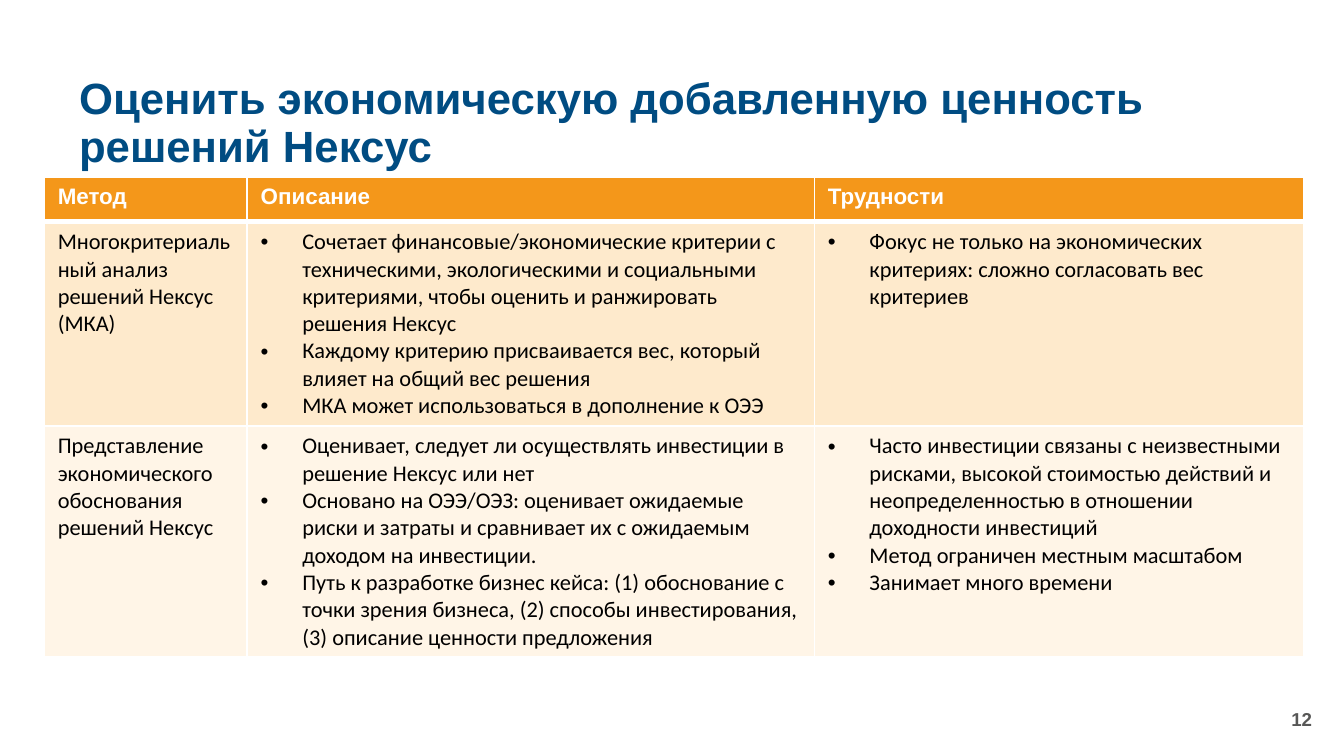
from lxml.etree import SubElement
from pptx import Presentation
from pptx.dml.color import RGBColor as RGB
from pptx.enum.text import MSO_ANCHOR as Anchor, PP_ALIGN as Align
from pptx.oxml import parse_xml
from pptx.oxml.ns import nsdecls, qn
from pptx.util import Inches, Pt

# Content
TITLE = "Оценить экономическую добавленную ценность решений Нексус"
PAGE_NUMBER = "12"
HEADERS = ["Метод", "Описание", "Трудности"]
# Each row: method, description bullets, difficulty bullets
METHODS = [
    ("Многокритериальный анализ решений Нексус (МКА)",
     ["Сочетает финансовые/экономические критерии с техническими, экологическими "
      "и социальными критериями, чтобы оценить и ранжировать решения Нексус",
      "Каждому критерию присваивается вес, который влияет на общий вес решения",
      "МКА может использоваться в дополнение к ОЭЭ"],
     ["Фокус не только на экономических критериях: сложно согласовать вес критериев"]),
    ("Представление экономического обоснования решений Нексус",
     ["Оценивает, следует ли осуществлять инвестиции в решение Нексус или нет",
      "Основано на ОЭЭ/ОЭЗ: оценивает ожидаемые риски и затраты и сравнивает их "
      "с ожидаемым доходом на инвестиции.",
      "Путь к разработке бизнес кейса: (1) обоснование с точки зрения бизнеса, "
      "(2) способы инвестирования, (3) описание ценности предложения"],
     ["Часто инвестиции связаны с неизвестными рисками, высокой стоимостью действий "
      "и неопределенностью в отношении доходности инвестиций",
      "Метод ограничен местным масштабом",
      "Занимает много времени"]),
]

# Theme and layout, in points and inches
THEME = {
    "title": {"name": "Arial", "size": 23.4, "bold": True, "color": "004C82"},
    "number": {"name": "Arial", "size": 10, "bold": True, "color": "575756"},
    "header": {"name": "Arial", "size": 12, "bold": True, "color": "FFFFFF"},
    "body": {"name": "Calibri", "size": 12, "bold": False, "color": "000000"},
    "header_fill": "F4971A",
    "row_fills": ["FEEACC", "FFF5E7"],
    "border": "FFFFFF",
}
TITLE_AREA = (0.49, 0.63, 9.37, 0.59)
NUMBER_AREA = (7.61, 5.2, 2.25, 0.3)
TABLE_AREA = (0.33, 1.32, 9.37, 3.57)
COLUMN_WIDTHS = [1.51, 4.22, 3.64]
ROW_HEIGHTS = [0.33, 1.52, 1.72]
BULLET_INDENT = Inches(0.31)


def apply_font(font, style):
    values = {**style, "size": Pt(style["size"])}
    font.color.rgb = RGB.from_string(values.pop("color"))
    for name, value in values.items():
        setattr(font, name, value)


def add_text(page, area, text, style, **formats):
    box = page.shapes.add_textbox(*map(Inches, area))
    box.text_frame.word_wrap = True
    box.text_frame.vertical_anchor = Anchor.MIDDLE
    para = box.text_frame.paragraphs[0]
    for name, value in formats.items():
        setattr(para, name, value)
    span = para.add_run()
    span.text = text
    apply_font(span.font, style)


def add_bullet(para):
    props = para._p.get_or_add_pPr()
    props.set("marL", str(BULLET_INDENT))
    props.set("indent", str(-BULLET_INDENT))
    SubElement(props, qn("a:buFont"), typeface="Arial")
    SubElement(props, qn("a:buChar"), char="•")


def set_borders(cell, widths):
    props = cell._tc.get_or_add_tcPr()
    for index, (side, width) in enumerate(widths.items()):
        props.insert(index, parse_xml(
            f'<a:ln{side} {nsdecls("a")} w="{Pt(width)}"><a:solidFill>'
            f'<a:srgbClr val="{THEME["border"]}"/></a:solidFill></a:ln{side}>'))


def fill_cell(cell, content, style, fill, widths):
    cell.fill.solid()
    cell.fill.fore_color.rgb = RGB.from_string(fill)
    set_borders(cell, widths)
    bulleted = isinstance(content, list)
    lines = content if bulleted else [content]
    frame = cell.text_frame
    for index, line in enumerate(lines):
        para = frame.add_paragraph() if index else frame.paragraphs[0]
        if bulleted:
            add_bullet(para)
        span = para.add_run()
        span.text = line
        apply_font(span.font, style)


def add_methods_table(page):
    rows = [HEADERS, *METHODS]
    fills = [THEME["header_fill"], *THEME["row_fills"]]
    table = page.shapes.add_table(
        len(rows), len(HEADERS), *map(Inches, TABLE_AREA)).table
    for column, width in zip(table.columns, COLUMN_WIDTHS):
        column.width = Inches(width)
    for row, height in zip(table.rows, ROW_HEIGHTS):
        row.height = Inches(height)
    for index, (row, fill) in enumerate(zip(rows, fills)):
        style = THEME["body" if index else "header"]
        # A thicker rule separates the header from the body
        widths = {"L": 1, "R": 1,
                  "T": 3 if index == 1 else 1, "B": 3 if index == 0 else 1}
        for column, content in enumerate(row):
            fill_cell(table.cell(index, column), content, style, fill, widths)


def main():
    deck = Presentation()
    # Widescreen page, 16:9
    deck.slide_width = Inches(10)
    deck.slide_height = deck.slide_width * 9 // 16
    page = deck.slides.add_slide(deck.slide_layouts[6])
    add_text(page, TITLE_AREA, TITLE, THEME["title"], line_spacing=0.9)
    add_text(page, NUMBER_AREA, PAGE_NUMBER, THEME["number"], alignment=Align.RIGHT)
    add_methods_table(page)
    deck.save("out.pptx")


if __name__ == "__main__":
    main()
